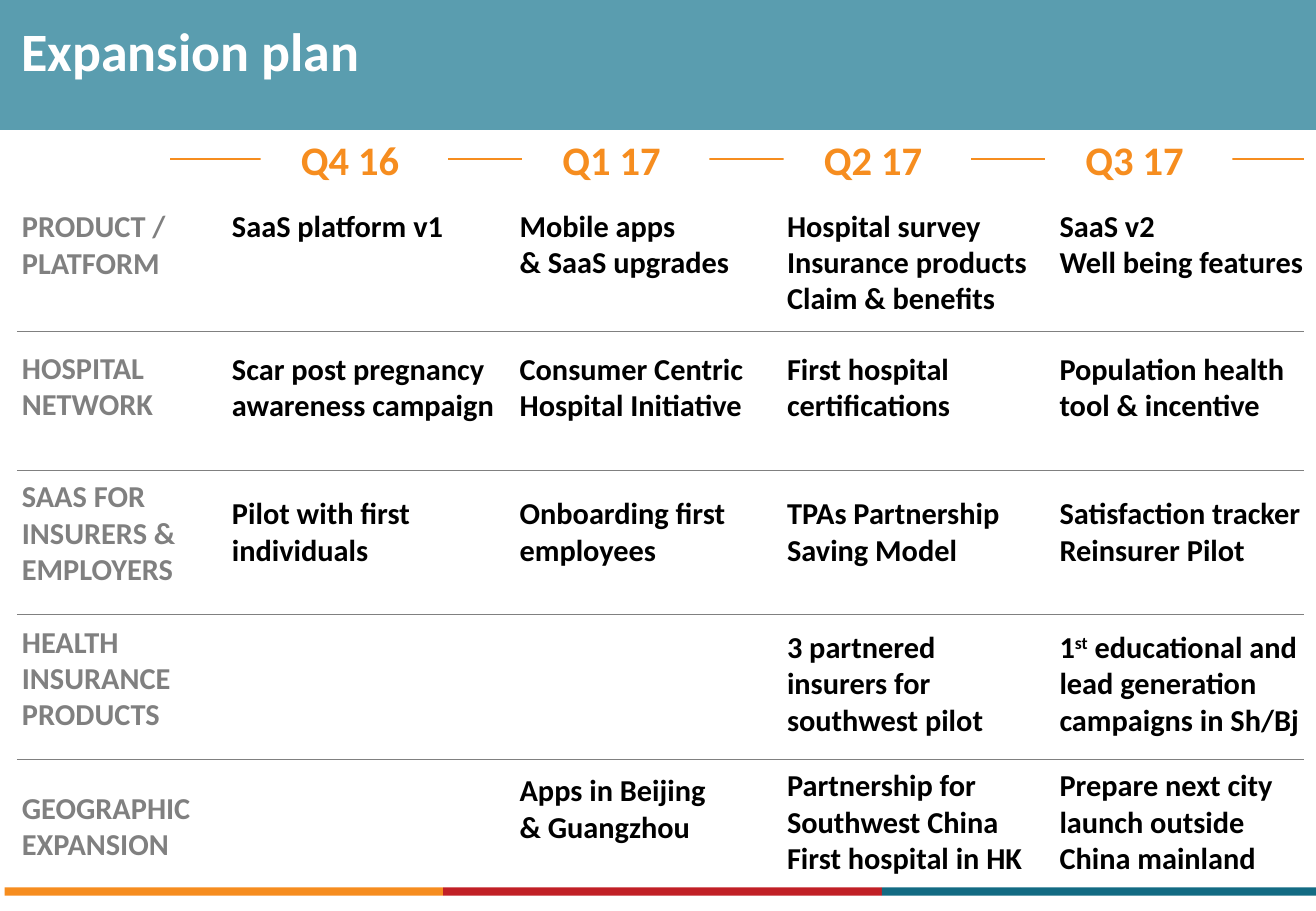
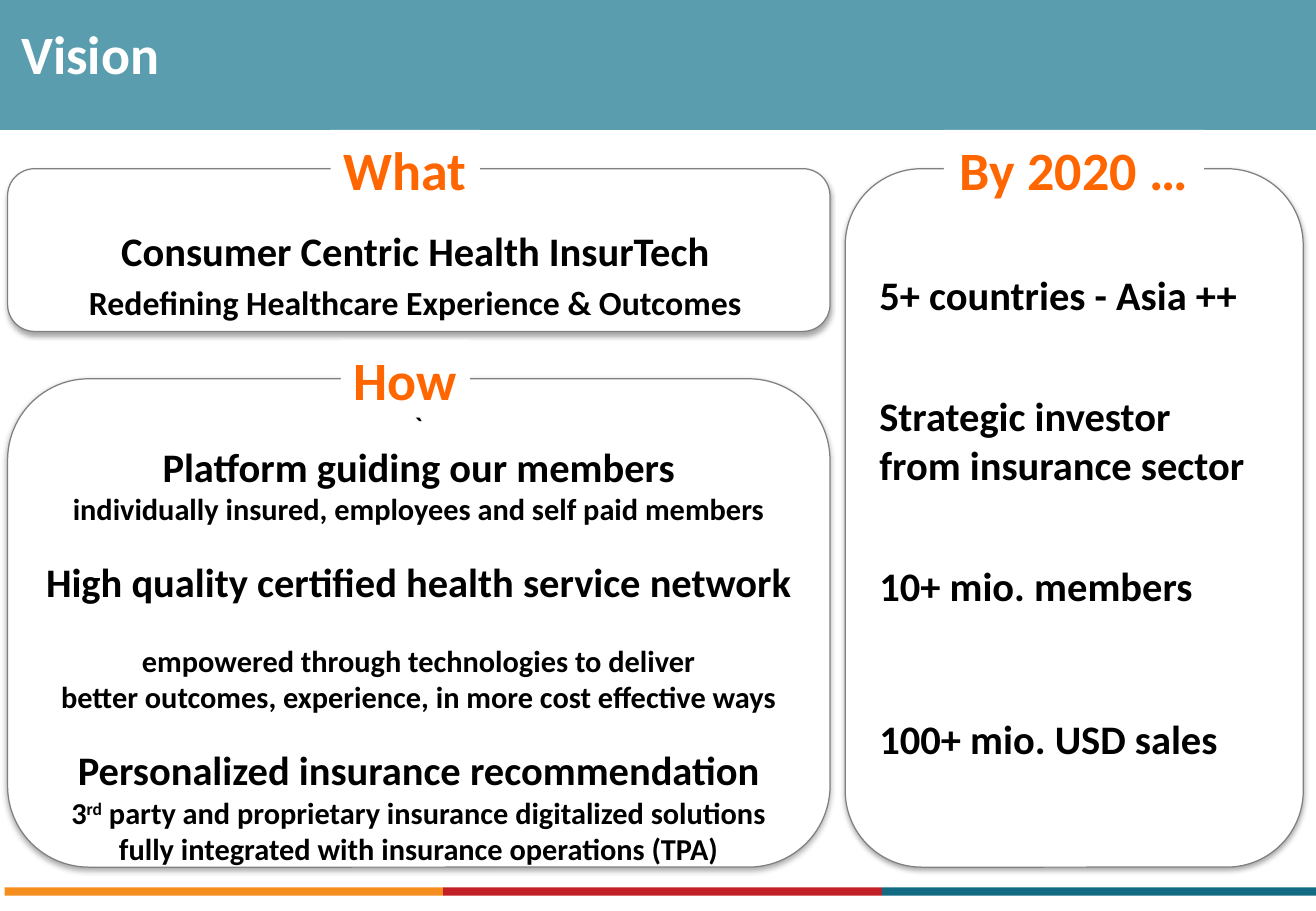
from lxml import etree
from pptx import Presentation
from pptx.dml.color import RGBColor
from pptx.enum import shapes as kinds, text as txt
from pptx.oxml.ns import qn
from pptx.util import Pt

WIDE, HIGH = 780, 540
FONT = "Calibri"
WHITE, BLACK, GREY = "FFFFFF", "000000", "808080"
TEAL, AMBER, RED, NAVY, ORANGE = "31859C", "F68D1F", "C12026", "136B83", "FF6600"
RECT, ROUND = kinds.MSO_SHAPE.RECTANGLE, kinds.MSO_SHAPE.ROUNDED_RECTANGLE
LEFT, CENTER = txt.PP_ALIGN.LEFT, txt.PP_ALIGN.CENTER
TOP, MIDDLE = txt.MSO_ANCHOR.TOP, txt.MSO_ANCHOR.MIDDLE

# Expansion plan: quarters, then (label, label centre, cell top, cells)
QUARTERS = ["Q4 16", "Q1 17", "Q2 17", "Q3 17"]
COLUMNS = [(134.5, 162), (305, 150), (463.5, 150), (625, 150)]  # left, width
PLAN = [
    ("PRODUCT / PLATFORM", 144.5, 119.5,
     ["SaaS platform v1", "Mobile apps\n& SaaS upgrades",
      "Hospital survey\nInsurance products\nClaim & benefits",
      "SaaS v2\nWell being features"]),
    ("HOSPITAL NETWORK", 228.5, 204.5,
     ["Scar post pregnancy awareness campaign",
      "Consumer Centric Hospital Initiative",
      "First hospital certifications", "Population health tool & incentive"]),
    ("SAAS FOR\nINSURERS &\nEMPLOYERS", 315.5, 290,
     ["Pilot with first individuals", "Onboarding first employees",
      "TPAs Partnership\nSaving Model", "Satisfaction tracker\nReinsurer Pilot"]),
    ("HEALTH INSURANCE PRODUCTS", 401.5, 369.25,
     ["", "", "3 partnered insurers for southwest pilot",
      "1^st^ educational and lead generation campaigns in Sh/Bj"]),
    ("GEOGRAPHIC EXPANSION", 489.25, 451.25,
     ["", "Apps in Beijing\n& Guangzhou",
      "Partnership for Southwest China\nFirst hospital in HK",
      "Prepare next city launch outside China mainland"]),
]
NUDGE = {"Apps in Beijing\n& Guangzhou": 3}
RULES = [196.5, 278.5, 364.25, 449.75]

# Vision: (heading, heading left and width, box, top and right inset,
#          alignment, lines of (text, size, space before))
PANELS = [
    ("By 2020 …", 559.5, 154, (501, 100, 271.5, 414), (47, 7), LEFT, [
        ("5+ countries - Asia ++", 24, 0),
        ("Strategic investor", 24, 43),
        ("from insurance sector", 24, 0),
        ("10+ mio. members", 24, 43),
        ("100+ mio. USD sales", 24, 62)]),
    ("What", 196, 88.5, (4.5, 100, 487.5, 96.5), (29.5, 11), CENTER, [
        ("Consumer Centric Health InsurTech", 24, 0),
        ("Redefining Healthcare Experience & Outcomes", 20, 4)]),
    ("How", 202, 76.5, (4.5, 224.5, 487.5, 289.5), (4, 7), CENTER, [
        ("`", 16, 0),
        ("Platform guiding our members", 24, 0),
        ("individually insured, employees and self paid members", 18, 0),
        ("High quality certified health service network", 24, 18),
        ("empowered through technologies to deliver", 18, 21.5),
        ("better outcomes, experience, in more cost effective ways", 18, 0),
        ("Personalized insurance recommendation", 24, 18),
        ("3^rd^ party and proprietary insurance digitalized solutions", 18, 0),
        ("fully integrated with insurance operations (TPA)", 18, 0)]),
]


def rgb(code):
    return RGBColor.from_string(code)


def style(par, size, color, align=LEFT):
    par.alignment = align
    font = par.font
    font.name, font.size, font.bold = FONT, Pt(size), True
    font.color.rgb = rgb(color)


def write(shape, lines, color, align=LEFT, anchor=TOP, inset=(3, 3, 3, 3), wrap=True):
    """Fill a shape with (text, size, space before); ^ encloses superscript."""
    frame = shape.text_frame
    frame.word_wrap, frame.vertical_anchor = wrap, anchor
    (frame.margin_left, frame.margin_top,
     frame.margin_right, frame.margin_bottom) = map(Pt, inset)
    for n, (words, size, before) in enumerate(lines):
        par = frame.add_paragraph() if n else frame.paragraphs[0]
        style(par, size, color, align)
        if before:
            par.space_before = Pt(before)
        for k, part in enumerate(words.split("^")):
            run = par.add_run()
            run.text = part
            if k % 2:
                run.font._element.set("baseline", "30000")


def block(slide, box, fill, kind=RECT, line=None):
    shape = slide.shapes.add_shape(kind, *map(Pt, box))
    shape.shadow.inherit = False
    shape.fill.solid()
    shape.fill.fore_color.rgb = rgb(fill)
    if line:
        shape.line.color.rgb, shape.line.width = rgb(line), Pt(0.75)
    else:
        shape.line.fill.background()
    return shape


def rule(slide, left, right, y, color, width):
    line = slide.shapes.add_connector(
        kinds.MSO_CONNECTOR.STRAIGHT, Pt(left), Pt(y), Pt(right), Pt(y))
    line.line.color.rgb, line.line.width = rgb(color), Pt(width)
    etree.SubElement(line._element.spPr, qn("a:effectLst"))


def alpha(color, percent):
    etree.SubElement(color, qn("a:alpha")).set("val", str(percent * 1000))


def shade(shape):
    effects = shape._element.spPr.find(qn("a:effectLst"))
    outer = etree.SubElement(effects, qn("a:outerShdw"), blurRad=str(Pt(3.1)),
                             dist=str(Pt(1.8)), dir="5400000", rotWithShape="0")
    alpha(etree.SubElement(outer, qn("a:srgbClr"), val=BLACK), 35)


def frame_layout(layout, slide):
    """Put the band and the footer bars on the layout."""
    for item in list(layout.placeholders):
        item._element.getparent().remove(item._element)
    band = block(slide, (0, 0, WIDE, 77), TEAL)
    alpha(band._element.spPr.find(".//" + qn("a:srgbClr")), 80)
    parts = [band]
    for n, color in enumerate([AMBER, RED, NAVY]):
        left = 2.75 + 260 * n
        parts.append(block(slide, (left, 526, min(260, WIDE - left), 5), color))
    for part in parts:
        layout.shapes._spTree.append(part._element)


def head(slide, words, box):
    """Set the slide's heading in a one-cell table on the band."""
    table = slide.shapes.add_table(1, 1, *map(Pt, box)).table
    table.first_row = table.horz_banding = False
    cell = table.cell(0, 0)
    cell.fill.background()
    cell.vertical_anchor = MIDDLE
    cell.margin_left = cell.margin_right = Pt(8)
    cell.margin_top = cell.margin_bottom = Pt(5)
    for side in ("a:lnB", "a:lnT", "a:lnR", "a:lnL"):
        edge = etree.Element(qn(side), w="0")
        etree.SubElement(edge, qn("a:noFill"))
        cell._tc.tcPr.insert(0, edge)
    cell.text = words
    style(cell.text_frame.paragraphs[0], 32, WHITE)


def note(slide, box, words, color, anchor=TOP, inset=(3, 3, 0, 3)):
    shape = slide.shapes.add_textbox(*map(Pt, box))
    write(shape, [(row, 18, 0) for row in words.split("\n")], color,
          anchor=anchor, inset=inset)


def plan(slide):
    # Timeline
    rule(slide, 101, 773, 94.25, AMBER, 1)
    head(slide, "Expansion plan", (4.5, -8, 629.5, 78.5))
    for n, name in enumerate(QUARTERS):
        box = block(slide, (154.5 + 155 * n, 83.25, 111, 22), WHITE)
        write(box, [(name, 24, 0)], AMBER, CENTER, MIDDLE, (0, 3.5, 5, 3.5))
    # Grid
    for label, mid, top, cells in PLAN:
        note(slide, (10, mid - 36, 136, 72), label, GREY, MIDDLE)
        for (left, width), words in zip(COLUMNS, cells):
            if words:
                note(slide, (left, top + NUDGE.get(words, 0), width, 82), words, BLACK)
    for y in RULES:
        rule(slide, 10, 773, y, GREY, 0.25)


def vision(slide):
    head(slide, "Vision", (4.5, -2, 743, 70.5))
    for _, _, _, box, (top, right), align, lines in PANELS:
        panel = block(slide, box, WHITE, ROUND, GREY)
        shade(panel)
        write(panel, lines, BLACK, align, inset=(7, top, right, 3.5))
    for name, left, width, box, *_ in PANELS:
        tag = block(slide, (left, box[1] - 23, width, 46), WHITE)
        write(tag, [(name, 32, 0)], ORANGE, CENTER, MIDDLE, (7, 3.5, 7, 3.5), False)


def main():
    deck = Presentation()
    deck.slide_width, deck.slide_height = Pt(WIDE), Pt(HIGH)
    layout = deck.slide_layouts[6]
    first, second = (deck.slides.add_slide(layout) for _ in range(2))
    frame_layout(layout, first)
    plan(first)
    vision(second)
    deck.save("out.pptx")


if __name__ == "__main__":
    main()
